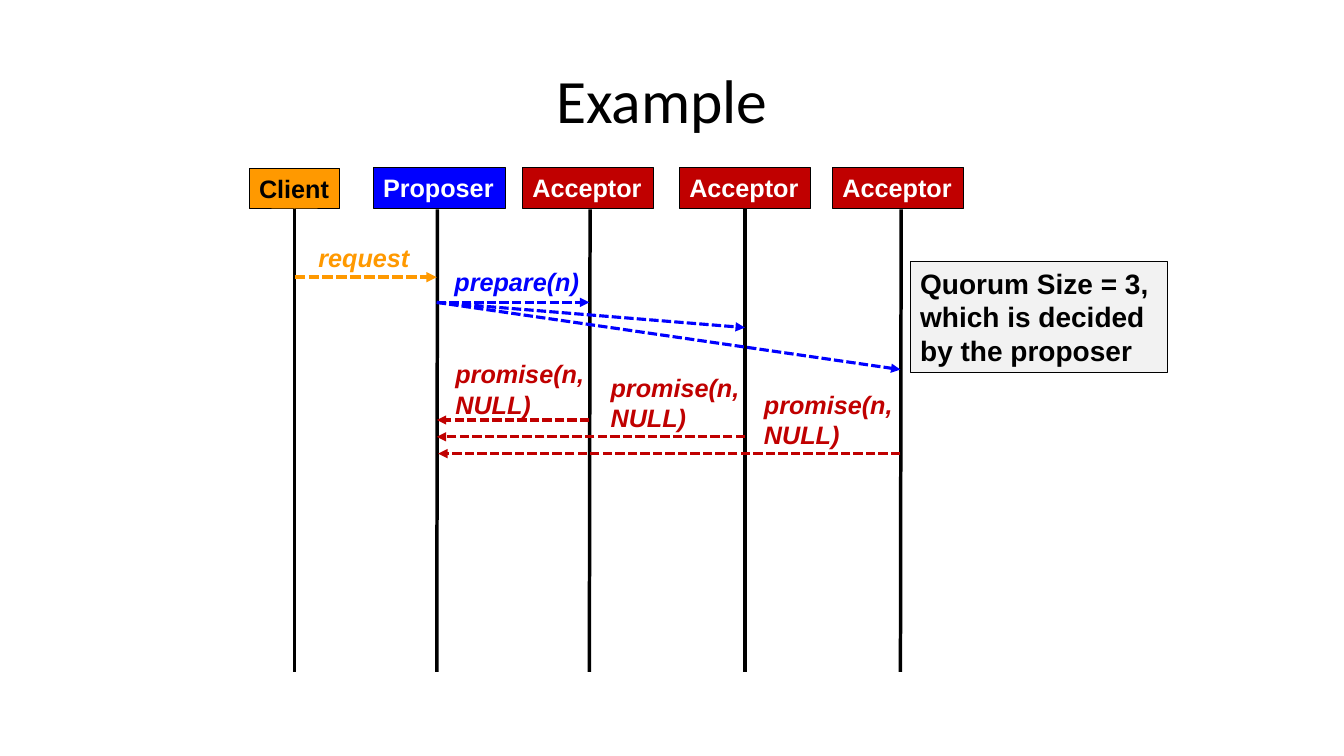
from pptx import Presentation
from pptx.dml.color import RGBColor
from pptx.enum.dml import MSO_LINE_DASH_STYLE as DASH
from pptx.enum.shapes import MSO_CONNECTOR, MSO_SHAPE
from pptx.enum.text import MSO_ANCHOR, MSO_AUTO_SIZE, PP_ALIGN
from pptx.oxml.ns import qn
from pptx.util import Pt
from lxml.etree import SubElement

BLACK = RGBColor(0x00, 0x00, 0x00)
WHITE = RGBColor(0xFF, 0xFF, 0xFF)
ORANGE = RGBColor(0xFF, 0x99, 0x00)
BLUE = RGBColor(0x00, 0x00, 0xFF)
RED = RGBColor(0xC0, 0x00, 0x00)
GREY = RGBColor(0xF2, 0xF2, 0xF2)

# Lifeline positions
CLIENT, PROPOSER, ACCEPTOR_1, ACCEPTOR_2, ACCEPTOR_3 = 210.4, 312, 421, 532.1, 643.2
LIFE_TOP, LIFE_BOTTOM = 149.5, 480
PROMISE = "promise(n, \vNULL)"

# name, left, top, width, fill, text colour, lifeline
ROLES = [
    ("Client", 178, 120.2, 64.8, ORANGE, BLACK, CLIENT),
    ("Proposer", 266.5, 119.5, 94.3, BLUE, WHITE, PROPOSER),
    ("Acceptor", 373.2, 119.5, 93.6, RED, WHITE, ACCEPTOR_1),
    ("Acceptor", 485.3, 119.5, 93.6, RED, WHITE, ACCEPTOR_2),
    ("Acceptor", 594.7, 119.5, 93.6, RED, WHITE, ACCEPTOR_3),
]
# start x, start y, end x, end y, colour, line width
MESSAGES = [
    (CLIENT, 198, PROPOSER, 198, ORANGE, 2.5),
    (PROPOSER, 216, ACCEPTOR_1, 216, BLUE, 2.25),
    (PROPOSER, 216, ACCEPTOR_2, 234, BLUE, 2.25),
    (PROPOSER, 216, ACCEPTOR_3, 264, BLUE, 2.25),
    (ACCEPTOR_1, 300, PROPOSER, 300, RED, 2.25),
    (ACCEPTOR_2, 312, PROPOSER, 312, RED, 2.25),
    (ACCEPTOR_3, 324, PROPOSER + 1, 324, RED, 2.25),
]
# text, left, top, width, height, colour
LABELS = [
    ("request", 220.3, 169.2, 79.9, 29, ORANGE),
    ("prepare(n)", 317.5, 186.5, 109.4, 29, BLUE),
    (PROMISE, 318.2, 252.7, 112.3, 51, RED),
    (PROMISE, 429.1, 262.1, 112.3, 51, RED),
    (PROMISE, 538.6, 274.3, 112.3, 51, RED),
]


def set_text(s, text, color, size=18, italic=False, wrap=False):
    tf = s.text_frame
    tf.text = text
    tf.word_wrap = wrap
    tf.auto_size = MSO_AUTO_SIZE.SHAPE_TO_FIT_TEXT
    tf.vertical_anchor = MSO_ANCHOR.TOP
    p = tf.paragraphs[0]
    p.alignment = PP_ALIGN.LEFT
    for r in p.runs:
        r.font.name = "Arial"
        r.font.size = Pt(size)
        r.font.bold = True
        r.font.italic = italic
        r.font.color.rgb = color


def add_box(sp, left, top, width, height, fill):
    s = sp.add_shape(MSO_SHAPE.RECTANGLE, Pt(left), Pt(top), Pt(width), Pt(height))
    s.shadow.inherit = False
    s.fill.solid()
    s.fill.fore_color.rgb = fill
    s.line.color.rgb = BLACK
    s.line.width = Pt(0.75)
    return s


def add_line(sp, x1, y1, x2, y2, color, width):
    s = sp.add_connector(MSO_CONNECTOR.STRAIGHT, Pt(x1), Pt(y1), Pt(x2), Pt(y2))
    s.line.color.rgb = color
    s.line.width = Pt(width)
    SubElement(s._element.spPr, qn("a:effectLst"))
    return s


def add_role(sp, name, left, top, width, fill, color, life_x):
    life = add_line(sp, life_x + 0.5, LIFE_TOP, life_x, LIFE_BOTTOM, BLACK, 2.5)
    box = add_box(sp, left, top, width, 29.1, fill)
    set_text(box, name, color)
    # Join the lifeline where it starts at the middle of the box
    if abs(left + width / 2 - life_x) < 0.5:
        life.begin_connect(box, 2)


def add_message(sp, x1, y1, x2, y2, color, width):
    s = add_line(sp, x1, y1, x2, y2, color, width)
    s.line.dash_style = DASH.SQUARE_DOT
    SubElement(s.line._get_or_add_ln(), qn("a:tailEnd"), type="triangle")


def add_label(sp, text, left, top, width, height, color):
    s = sp.add_textbox(Pt(left), Pt(top), Pt(width), Pt(height))
    set_text(s, text, color, italic=True)


def add_title(slide, text):
    s = slide.shapes.title
    s.left, s.top, s.width, s.height = Pt(66), Pt(21.6), Pt(813.6), Pt(104.4)
    tf = s.text_frame
    tf.text = text
    tf.vertical_anchor = MSO_ANCHOR.MIDDLE
    p = tf.paragraphs[0]
    p.alignment = PP_ALIGN.CENTER
    p.line_spacing = 0.9
    font = p.runs[0].font
    font.name = "Calibri"
    font.size = Pt(44)
    font.color.rgb = BLACK


def main():
    prs = Presentation()
    prs.slide_width, prs.slide_height = Pt(960), Pt(540)
    slide = prs.slides.add_slide(prs.slide_layouts[5])
    sp = slide.shapes
    add_title(slide, "Example")

    # Participants and their lifelines
    for role in ROLES:
        add_role(sp, *role)

    # Messages and their labels
    for message in MESSAGES:
        add_message(sp, *message)
    for label in LABELS:
        add_label(sp, *label)

    # Quorum note
    note = add_box(sp, 650.2, 186.5, 183.6, 79.9, GREY)
    set_text(note, "Quorum Size = 3, \vwhich is decided \vby the proposer",
             BLACK, size=20, wrap=True)

    prs.save("out.pptx")


if __name__ == "__main__":
    main()
